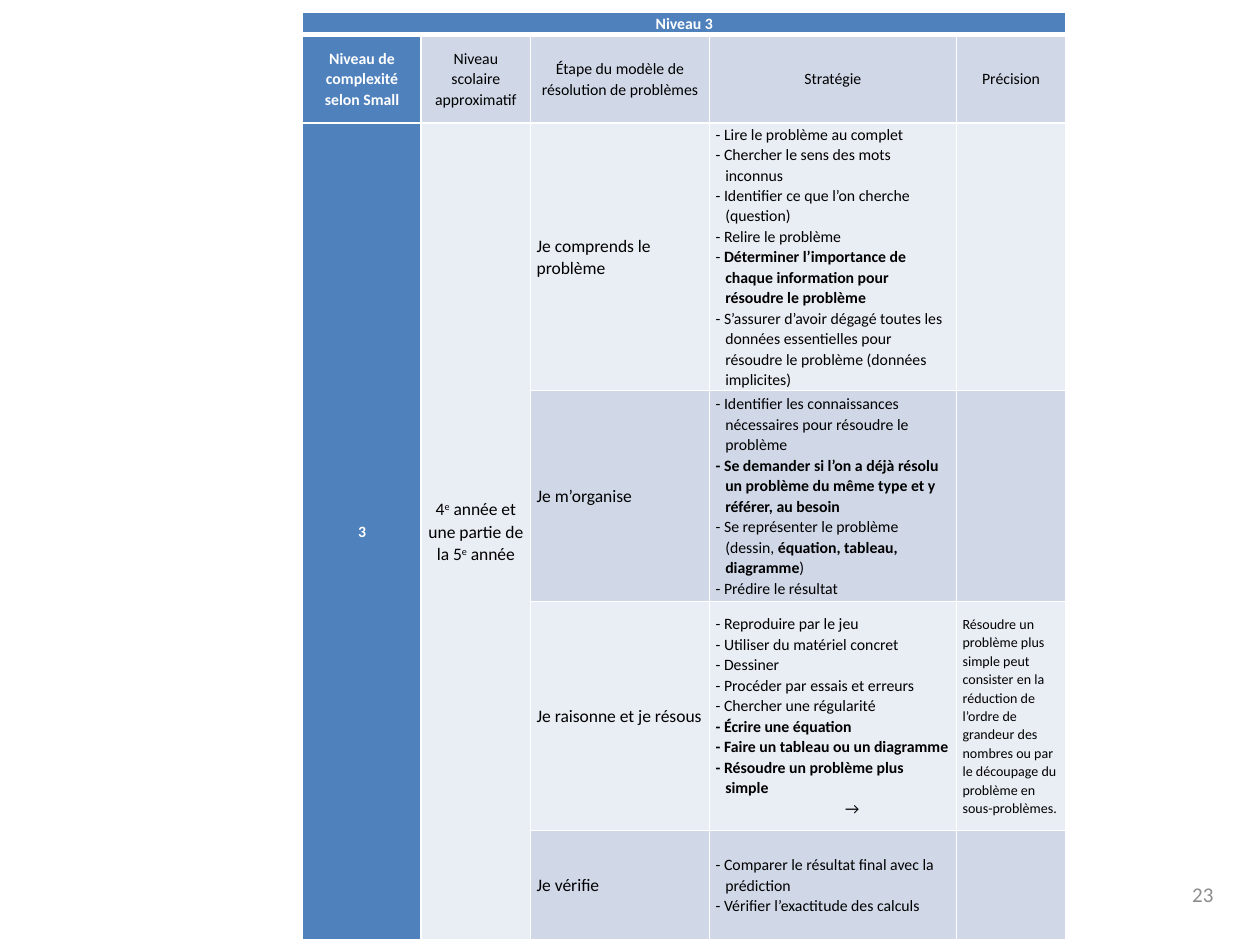
from lxml.etree import SubElement
from pptx import Presentation
from pptx.dml.color import RGBColor
from pptx.enum.text import MSO_ANCHOR, PP_ALIGN
from pptx.oxml.ns import qn
from pptx.util import Pt

WHITE = RGBColor(0xFF, 0xFF, 0xFF)
BLACK = RGBColor(0x00, 0x00, 0x00)
GREY = RGBColor(0x8C, 0x8C, 0x8C)
BLUE = RGBColor(0x4F, 0x81, 0xBD)
BAND_DARK = RGBColor(0xD0, 0xD8, 0xE8)
BAND_LIGHT = RGBColor(0xE9, 0xED, 0xF4)

FONT = "Calibri"
COLUMN_WIDTHS = [67.7, 62.4, 102.3, 141.1, 62.6]
ROW_HEIGHTS = [13, 50.6, 152.9, 120.5, 130.9, 62.4]
HANGING = (5.5, -5.5)
FLUSH = (0, 0)
ARROW_INDENT = (74, 0)

HEADINGS = [
    "Niveau de complexité selon Small",
    "Niveau scolaire approximatif",
    "Étape du modèle de résolution de problèmes",
    "Stratégie",
    "Précision",
]

# Each step: name, strategies, precision. "*" switches bold, "^" switches superscript.
STEPS = [
    ("Je comprends le problème", [
        "- Lire le problème au complet",
        "- Chercher le sens des mots inconnus",
        "- Identifier ce que l’on cherche (question)",
        "- Relire le problème",
        "- *Déterminer l’importance de chaque information pour résoudre le problème*",
        "- S’assurer d’avoir dégagé toutes les données essentielles pour résoudre "
        "le problème (données implicites)",
    ], ""),
    ("Je m’organise", [
        "- Identifier les connaissances nécessaires pour résoudre le problème",
        "*- Se demander si l’on a déjà résolu un problème du même type et y référer, "
        "au besoin*",
        "- Se représenter le problème (dessin, *équation, tableau, diagramme*)",
        "- Prédire le résultat",
    ], ""),
    ("Je raisonne et je résous", [
        "- Reproduire par le jeu",
        "- Utiliser du matériel concret",
        "- Dessiner",
        "- Procéder par essais et erreurs",
        "- Chercher une régularité",
        "*- Écrire une équation*",
        "*- Faire un tableau ou un diagramme*",
        "*- Résoudre un problème plus simple*",
        "→",
    ], "Résoudre un problème plus simple peut consister en la réduction de l’ordre de "
       "grandeur des nombres ou par le découpage du problème en sous-problèmes."),
    ("Je vérifie", [
        "- Comparer le résultat final avec la prédiction",
        "- Vérifier l’exactitude des calculs",
    ], ""),
]


def add_spans(para, text, size, color, bold):
    """Add text as runs, switching bold at "*" and superscript at "^"."""
    raised = False
    for part in text.replace("*", "\n*\n").replace("^", "\n^\n").split("\n"):
        if part == "*":
            bold = not bold
        elif part == "^":
            raised = not raised
        elif part:
            span = para.add_run()
            span.text = part
            span.font.name = FONT
            span.font.size = Pt(size)
            span.font.bold = bold
            span.font.color.rgb = color
            if raised:
                span.font._element.set("baseline", "30000")


def write_text(frame, lines, size=9, color=BLACK, bold=False,
               align=PP_ALIGN.LEFT, spacing=1.07, indent=FLUSH):
    frame.word_wrap = True
    for number, line in enumerate(lines):
        para = frame.add_paragraph() if number else frame.paragraphs[0]
        para.alignment = align
        para.line_spacing = spacing
        left, first = ARROW_INDENT if line == "→" else indent
        properties = para._p.get_or_add_pPr()
        properties.set("marL", str(Pt(left)))
        properties.set("indent", str(Pt(first)))
        add_spans(para, line, size, color, bold)
        if not line:
            SubElement(para._p, qn("a:endParaRPr"), sz=str(size * 100))


def set_border(cell, side, width):
    line = SubElement(cell._tc.get_or_add_tcPr(), qn("a:" + side), w=str(Pt(width)))
    fill = SubElement(line, qn("a:solidFill"))
    SubElement(fill, qn("a:srgbClr"), val=str(WHITE))


def fill_cell(cell, lines, fill, **text_format):
    write_text(cell.text_frame, lines, **text_format)
    cell.fill.solid()
    cell.fill.fore_color.rgb = fill


def prepare_cells(table):
    """Set margins, anchor and white borders; the title row has a thick rule below."""
    for row_number, row in enumerate(table.rows):
        for cell in row.cells:
            cell.vertical_anchor = MSO_ANCHOR.MIDDLE
            cell.margin_left = cell.margin_right = Pt(3.6)
            cell.margin_top = cell.margin_bottom = Pt(0)
            set_border(cell, "lnL", 1)
            set_border(cell, "lnR", 1)
            set_border(cell, "lnT", 3 if row_number == 1 else 1)
            set_border(cell, "lnB", 3 if row_number == 0 else 1)


def add_strategy_table(page):
    frame = page.shapes.add_table(
        len(ROW_HEIGHTS), len(COLUMN_WIDTHS), Pt(173), Pt(6.8),
        Pt(sum(COLUMN_WIDTHS)), Pt(sum(ROW_HEIGHTS)))
    table = frame.table
    table.first_row = table.horz_banding = False
    for column, width in zip(table.columns, COLUMN_WIDTHS):
        column.width = Pt(width)
    for row, height in zip(table.rows, ROW_HEIGHTS):
        row.height = Pt(height)
    prepare_cells(table)

    white_bold = {"color": WHITE, "bold": True, "align": PP_ALIGN.CENTER}
    table.cell(0, 0).merge(table.cell(0, 4))
    fill_cell(table.cell(0, 0), ["Niveau 3"], BLUE, **white_bold)
    for column in range(1, 5):
        write_text(table.cell(0, column).text_frame, [""])

    for column, heading in enumerate(HEADINGS):
        if column == 0:
            fill_cell(table.cell(1, column), [heading], BLUE, **white_bold)
        else:
            fill_cell(table.cell(1, column), [heading], BAND_DARK, align=PP_ALIGN.CENTER)

    for column in (0, 1):
        table.cell(2, column).merge(table.cell(5, column))
    fill_cell(table.cell(2, 0), ["3"], BLUE, **white_bold)
    fill_cell(table.cell(2, 1), ["4^e^ année et une partie de la 5^e^ année"],
              BAND_LIGHT, size=10, align=PP_ALIGN.CENTER)

    for row, (step, strategies, precision) in enumerate(STEPS, start=2):
        band = BAND_DARK if row % 2 else BAND_LIGHT
        fill_cell(table.cell(row, 2), [step], band, size=10)
        fill_cell(table.cell(row, 3), strategies, band, indent=HANGING)
        fill_cell(table.cell(row, 4), [precision], band, size=8)


def add_page_number(page):
    box = page.shapes.add_textbox(Pt(654.5), Pt(496.8), Pt(46), Pt(28.8))
    box.text_frame.vertical_anchor = MSO_ANCHOR.MIDDLE
    write_text(box.text_frame, ["23"], size=12, color=GREY,
               align=PP_ALIGN.RIGHT, spacing=1.0)


def main():
    deck = Presentation()
    deck.slide_width, deck.slide_height = Pt(720), Pt(540)
    page = deck.slides.add_slide(deck.slide_layouts[6])
    add_page_number(page)
    add_strategy_table(page)
    deck.save("out.pptx")


if __name__ == "__main__":
    main()
